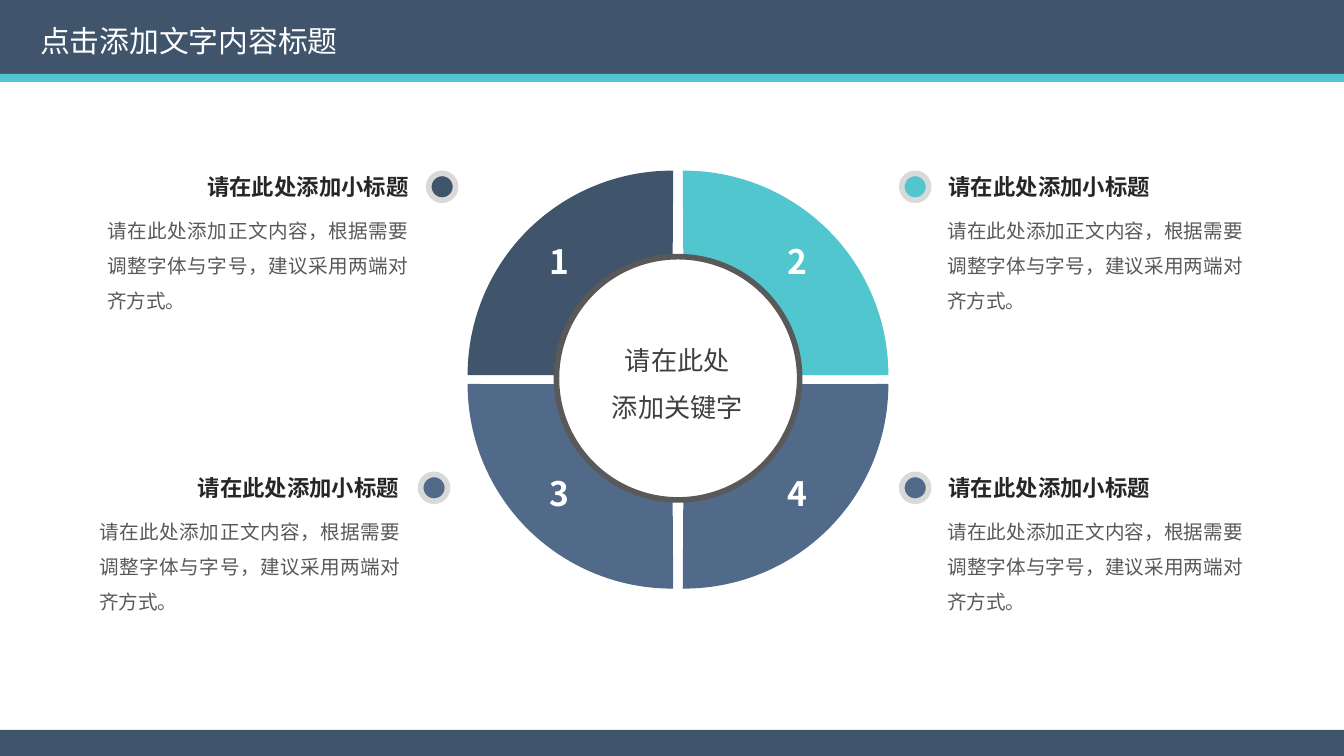
from lxml import etree
from pptx import Presentation
from pptx import util as u
from pptx.dml import color
from pptx.enum import shapes, text
from pptx.oxml import ns

FONT = "Noto Sans CJK SC"
COLORS = {
    "navy": "40546C", "teal": "51C6CF", "blue": "516A89", "white": "FFFFFF",
    "ring": "595959", "halo": "D9D9D9", "heading": "262626",
    "body": "595959", "keyword": "404040",
}
SUBTITLE = "请在此处添加小标题"
BODY = "请在此处添加正文内容，根据需要调整字体与字号，建议采用两端对齐方式。"
ALIGN = text.PP_ALIGN

presentation = Presentation()
presentation.slide_width = u.Inches(10)
presentation.slide_height = u.Inches(10 * 9 / 16)
slide = presentation.slides.add_slide(presentation.slide_layouts[6])


def add_shape(kind, box, fill, outline=None):
    shape = slide.shapes.add_shape(kind, *map(u.Inches, box))
    shape.shadow.inherit = False
    shape.fill.solid()
    shape.fill.fore_color.rgb = color.RGBColor.from_string(COLORS[fill])
    if outline:
        shape.line.color.rgb = color.RGBColor.from_string(COLORS[outline])
        shape.line.width = u.Pt(3)
    else:
        shape.line.fill.background()
    return shape


def add_text(box, lines, size, ink, align=ALIGN.LEFT, bold=False, spacing=1.0,
             wrap=False, anchor=text.MSO_ANCHOR.TOP):
    frame = slide.shapes.add_textbox(*map(u.Inches, box)).text_frame
    frame.word_wrap = wrap
    frame.vertical_anchor = anchor
    frame.text = lines
    for paragraph in frame.paragraphs:
        paragraph.alignment = align
        paragraph.line_spacing = spacing
        font = paragraph.font
        font.size = u.Pt(size)
        font.bold = bold
        font.name = FONT
        font.color.rgb = color.RGBColor.from_string(COLORS[ink])
        etree.SubElement(font._element, ns.qn("a:ea"), typeface=FONT)


for top, height, fill in [(0, 0.55, "navy"), (0.55, 0.06, "teal"), (5.43, 0.21, "navy")]:
    add_shape(shapes.MSO_SHAPE.RECTANGLE, (0, top, 10, height), fill)
add_text((0.2, 0.12, 2.45, 0.37), "点击添加文字内容标题", 16, "white")

quadrants = ["navy", "teal", "blue", "blue"]
for index, fill in enumerate(quadrants):
    row, column = divmod(index, 2)
    quadrant = add_shape(
        shapes.MSO_SHAPE.PIE, (3.48 + 0.09 * column, 1.27 + 0.07 * row, 3.04, 3.04), fill)
    quadrant.adjustments[0] = 161.78
    quadrant.adjustments[1] = 0.05
    transform = quadrant._element.spPr.xfrm
    transform.set("flipH", str(1 - column))
    transform.set("flipV", str(row))
    add_text((3.98 + 1.77 * column, 1.74 + 1.73 * row, 0.36, 0.4),
             str(index + 1), 18, "white", ALIGN.CENTER, bold=True)

add_shape(shapes.MSO_SHAPE.OVAL, (4.14, 1.91, 1.81, 1.81), "white", "ring")
add_text((4.45, 2.39, 1.18, 0.81), "请在此处\n添加关键字", 14, "keyword",
         ALIGN.CENTER, spacing=1.5, anchor=text.MSO_ANCHOR.MIDDLE)

captions = [
    (3.19, 1.18, 1.96, 0.7, 2.44, ALIGN.RIGHT),
    (6.71, 6.96, 1.98, 6.95, 2.4, ALIGN.LEFT),
    (3.13, 1.11, 1.96, 0.64, 2.44, ALIGN.RIGHT),
    (6.71, 6.96, 1.98, 6.95, 2.4, ALIGN.LEFT),
]
for index, caption in enumerate(captions):
    dot_left, heading_left, heading_width, body_left, body_width, align = caption
    top = 1.24 + 2.24 * (index // 2)
    add_shape(shapes.MSO_SHAPE.OVAL, (dot_left, top + 0.05, 0.2, 0.2), quadrants[index], "halo")
    add_text((heading_left, top, heading_width, 0.3), SUBTITLE, 12, "heading",
             align, bold=True, wrap=True)
    add_text((body_left, top + 0.25, body_width, 0.9), BODY, 10.5, "body",
             ALIGN.JUSTIFY, spacing=1.5, wrap=True)

presentation.save("out.pptx")
